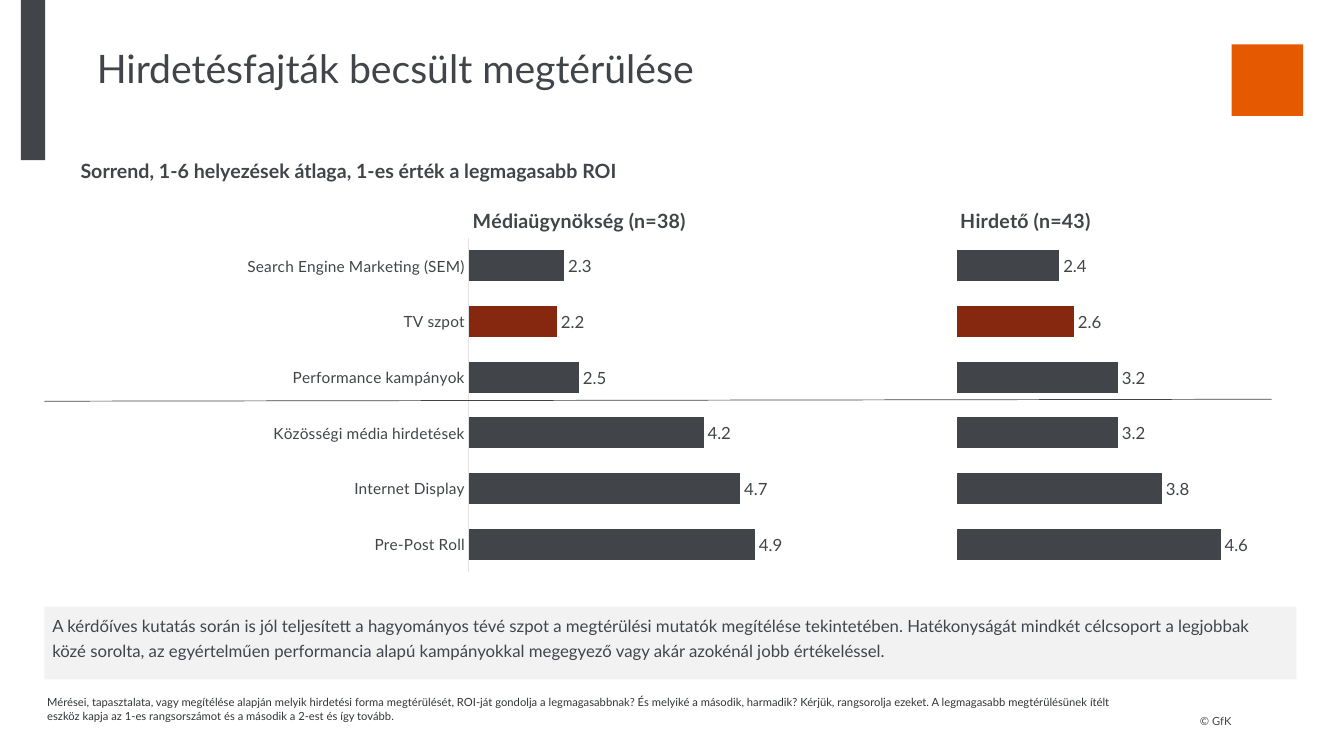
from dataclasses import dataclass
from typing import Optional

from lxml import etree
from pptx import Presentation
from pptx.chart.data import CategoryChartData
from pptx.dml.color import RGBColor
from pptx.enum.chart import XL_CHART_TYPE as ChartType
from pptx.enum.chart import XL_LABEL_POSITION as LabelPos
from pptx.enum.chart import XL_TICK_MARK as Tick
from pptx.enum.shapes import MSO_CONNECTOR as Connector
from pptx.enum.shapes import MSO_SHAPE as Shape
from pptx.enum.text import MSO_ANCHOR as Anchor
from pptx.enum.text import PP_ALIGN as Align
from pptx.oxml.ns import qn
from pptx.util import Cm, Pt

FONT = "Lato"
DARK = "414549"
RED = "85280F"
ORANGE = "E55A00"
PALE = "F2F2F2"
AXIS = "E1E3E5"
NOTE = "313437"
PLOT_X, PLOT_Y, PLOT_W, PLOT_H = 0.57, 0.12, 0.43, 0.75
TITLE_Y = 0.04
TV_INDEX = 1


@dataclass
class Block:
    box: tuple[float, float, float, float]
    fill: str


@dataclass
class Label:
    text: str
    box: tuple[float, float, float, float]
    size: float
    color: str = DARK
    bold: bool = False
    insets: tuple[float, float, float, float] = (0, 0, 0, 0)
    anchor: Anchor = Anchor.TOP
    align: Align = Align.LEFT
    spacing: float = 1.0
    wrap: bool = True
    fill: Optional[str] = None


@dataclass
class RankChart:
    title: str
    left: float
    categories: list[str]
    values: list[float]
    show_names: bool


BLOCKS = [
    Block((31.04, 1.12, 1.8, 1.8), ORANGE),
    Block((0.53, 0, 0.61, 4.04), DARK),
]

CHARTS = [
    RankChart("Hirdető (n=43)", 11.86, [str(n) for n in range(1, 7)],
              [2.4, 2.6, 3.2, 3.2, 3.8, 4.6], False),
    RankChart("Médiaügynökség (n=38)", -0.43,
              ["Search Engine Marketing (SEM)", "TV szpot", "Performance kampányok",
               "Közösségi média hirdetések", "Internet Display", "Pre-Post Roll"],
              [2.3, 2.2, 2.5, 4.2, 4.7, 4.9], True),
]

LABELS = [
    Label("Hirdetésfajták becsült megtérülése", (2.44, 1.12, 16.31, 2.13), 28),
    Label("Sorrend, 1-6 helyezések átlaga, 1-es érték a legmagasabb ROI",
          (2.03, 3.86, 13.7, 1.09), 14, bold=True, spacing=1.25, wrap=False),
    Label("A kérdőíves kutatás során is jól teljesített a hagyományos tévé szpot a "
          "megtérülési mutatók megítélése tekintetében. Hatékonyságát mindkét célcsoport "
          "a legjobbak közé sorolta, az egyértelműen performancia alapú kampányokkal "
          "megegyező vagy akár azokénál jobb értékeléssel.",
          (1.12, 15.29, 31.55, 1.83), 12, insets=(0.2, 0.1, 0.2, 0),
          spacing=1.25, fill=PALE),
    Label("Mérései, tapasztalata, vagy megítélése alapján melyik hirdetési forma "
          "megtérülését, ROI-ját gondolja a legmagasabbnak? És melyiké a második, "
          "harmadik? Kérjük, rangsorolja ezeket. A legmagasabb megtérülésünek ítélt "
          "eszköz kapja az 1-es rangsorszámot és a második a 2-est és így tovább.",
          (1.19, 17.09, 27.36, 1.24), 8, NOTE, insets=(0, 0, 0, 0.13),
          anchor=Anchor.BOTTOM),
    Label("© GfK", (29.64, 17.96, 1.4, 0.38), 8, anchor=Anchor.BOTTOM,
          align=Align.RIGHT, spacing=1.25, wrap=False),
]


def rgb(color: str) -> RGBColor:
    return RGBColor.from_string(color)


def paint(fill, color: str) -> None:
    fill.solid()
    fill.fore_color.rgb = rgb(color)


def apply(target, **formats) -> None:
    for name, value in formats.items():
        setattr(target, name, value)


def set_font(font, size: float, color: str = DARK, bold: bool = False) -> None:
    apply(font, name=FONT, size=Pt(size), bold=bold)
    font.color.rgb = rgb(color)


def add_block(s, block: Block):
    sp = s.shapes.add_shape(Shape.RECTANGLE, *map(Cm, block.box))
    sp.shadow.inherit = False
    paint(sp.fill, block.fill)
    sp.line.fill.background()
    return sp


def add_label(s, label: Label) -> None:
    if label.fill:
        sp = add_block(s, Block(label.box, label.fill))
    else:
        sp = s.shapes.add_textbox(*map(Cm, label.box))
    left, top, right, bottom = map(Cm, label.insets)
    tf = sp.text_frame
    apply(tf, word_wrap=label.wrap, vertical_anchor=label.anchor, margin_left=left,
          margin_top=top, margin_right=right, margin_bottom=bottom)
    p = tf.paragraphs[0]
    apply(p, alignment=label.align, line_spacing=label.spacing)
    r = p.add_run()
    r.text = label.text
    set_font(r.font, label.size, label.color, label.bold)


def set_layout(parent, index: int, **values) -> None:
    for old in parent.findall(qn("c:layout")):
        parent.remove(old)
    layout = etree.Element(qn("c:layout"))
    manual = etree.SubElement(layout, qn("c:manualLayout"))
    for name, value in values.items():
        etree.SubElement(manual, qn(f"c:{name}")).set("val", str(value))
    parent.insert(index, layout)


def add_rank_chart(s, rank: RankChart) -> None:
    data = CategoryChartData(number_format="0.0")
    data.categories = rank.categories
    data.add_series("Series 1", rank.values)
    chart = s.shapes.add_chart(ChartType.BAR_CLUSTERED, Cm(rank.left), Cm(4.65),
                               Cm(21.49), Cm(11.23), data).chart
    set_font(chart.font, 10)
    apply(chart, has_legend=False, has_title=True)
    p = chart.chart_title.text_frame.paragraphs[0]
    r = p.add_run()
    r.text = rank.title
    set_font(r.font, 14, bold=True)
    chart.chart_title.include_in_layout = False
    edges = {"xMode": "edge", "yMode": "edge", "x": PLOT_X}
    chart_xml = chart.element.find(qn("c:chart"))
    set_layout(chart_xml.find(qn("c:title")), 1, **edges, y=TITLE_Y)
    set_layout(chart_xml.find(qn("c:plotArea")), 0, layoutTarget="inner",
               **edges, y=PLOT_Y, w=PLOT_W, h=PLOT_H)

    names = chart.category_axis
    apply(names, reverse_order=True, visible=rank.show_names,
          major_tick_mark=Tick.NONE, has_major_gridlines=False)
    if rank.show_names:
        set_font(names.tick_labels.font, 11)
        names.format.line.width = Pt(0.75)
        names.format.line.color.rgb = rgb(AXIS)
    apply(chart.value_axis, minimum_scale=1, maximum_scale=6,
          visible=False, has_major_gridlines=False)

    plot = chart.plots[0]
    apply(plot, gap_width=80, overlap=100, vary_by_categories=False, has_data_labels=True)
    labels = plot.data_labels
    apply(labels, show_value=True, position=LabelPos.OUTSIDE_END,
          number_format="0.0", number_format_is_linked=False)
    set_font(labels.font, 12)
    bars = plot.series[0]
    paint(bars.format.fill, DARK)
    paint(bars.points[TV_INDEX].format.fill, RED)


def add_divider(s) -> None:
    line = s.shapes.add_connector(Connector.STRAIGHT, Cm(1.12), Cm(10.11), Cm(32.05), Cm(10.06))
    line.line.width = Pt(0.5)
    line.line.color.rgb = rgb(DARK)
    etree.SubElement(line.element.spPr, qn("a:effectLst"))


def main() -> None:
    prs = Presentation()
    apply(prs, slide_width=Cm(33.87), slide_height=Cm(19.05))
    s = prs.slides.add_slide(prs.slide_layouts[6])
    for block in BLOCKS:
        add_block(s, block)
    for rank in CHARTS:
        add_rank_chart(s, rank)
    add_divider(s)
    for label in LABELS:
        add_label(s, label)
    prs.save("out.pptx")


if __name__ == "__main__":
    main()
